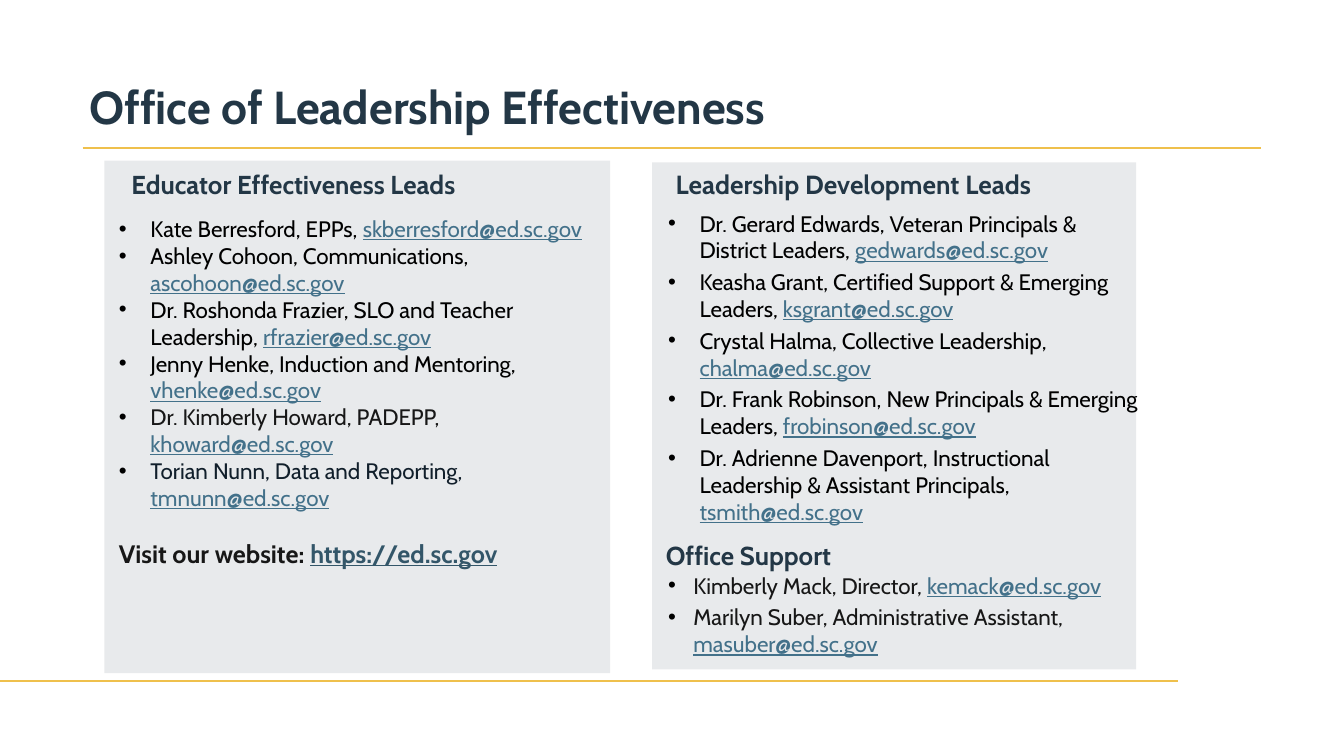
"""Build the Office of Leadership Effectiveness contact slide."""
from dataclasses import dataclass

from lxml import etree
from pptx import Presentation
from pptx.dml.color import RGBColor
from pptx.enum.shapes import MSO_CONNECTOR, MSO_SHAPE
from pptx.enum.text import PP_ALIGN
from pptx.oxml.ns import qn
from pptx.util import Pt

RECTANGLE = MSO_SHAPE.RECTANGLE
STRAIGHT = MSO_CONNECTOR.STRAIGHT
LEFT, CENTER = PP_ALIGN.LEFT, PP_ALIGN.CENTER
FONT = "Cabin"
NAVY, GOLD, LINK, DARK_LINK = "233746", "EFC04C", "43718A", "335669"
BLACK, CHARCOAL, INK = "000000", "171717", "111F2B"


@dataclass(frozen=True)
class Box:
    left: float
    top: float
    width: float
    height: float


@dataclass(frozen=True)
class Heading:
    text: str
    box: Box
    size: float
    spacing: float
    align: PP_ALIGN = CENTER


@dataclass(frozen=True)
class Contact:
    role: str
    link: str
    color: str = BLACK
    margin: float = 22.5
    hang: float = 22.5
    before: float = 0
    size: float = 16
    bold: bool = False
    link_color: str = LINK


PANELS = [Box(74.5, 114.8, 361.3, 366), Box(465.8, 116, 345.8, 362.2)]
RULES = [(59, 105.8, 900.7), (0, 486.7, 841.7)]
HEADINGS = [
    Heading("Office of Leadership Effectiveness", Box(64, 62, 850, 34.6), 33, 33.3, LEFT),
    Heading("Educator Effectiveness Leads", Box(75.5, 126.7, 268, 17.3), 18.5, 16),
    Heading("Leadership Development Leads", Box(467.3, 126.7, 284.4, 17.3), 18.7, 16),
    Heading("Office Support", Box(400.3, 385.2, 268.6, 22.3), 18.5, 22.3),
]
EDUCATOR = [
    Contact("Kate Berresford, EPPs, ", "skberresford@ed.sc.gov"),
    Contact("Ashley Cohoon, Communications, ", "ascohoon@ed.sc.gov"),
    Contact("Dr. Roshonda Frazier, SLO and Teacher Leadership, ", "rfrazier@ed.sc.gov"),
    Contact("Jenny Henke, Induction and Mentoring, ", "vhenke@ed.sc.gov"),
    Contact("Dr. Kimberly Howard, PADEPP, ", "khoward@ed.sc.gov", CHARCOAL),
    Contact("Torian Nunn, Data and Reporting, ", "tmnunn@ed.sc.gov", INK),
    Contact("Visit our website: ", "https://ed.sc.gov", CHARCOAL, 0, 0, 19.4, 18, True, DARK_LINK),
]
LEADERSHIP = [
    Contact(role, link, BLACK, 34, 22.5, 3.5)
    for role, link in [
        ("Dr. Gerard Edwards, Veteran Principals & District Leaders, ", "gedwards@ed.sc.gov"),
        ("Keasha Grant, Certified Support & Emerging Leaders, ", "ksgrant@ed.sc.gov"),
        ("Crystal Halma, Collective Leadership, ", "chalma@ed.sc.gov"),
        ("Dr. Frank Robinson, New Principals & Emerging Leaders, ", "frobinson@ed.sc.gov"),
        ("Dr. Adrienne Davenport, Instructional Leadership & Assistant Principals, ",
         "tsmith@ed.sc.gov"),
    ]
]
SUPPORT = [
    Contact("Kimberly Mack, Director, ", "kemack@ed.sc.gov", CHARCOAL, 29.5, 18, 33.6),
    Contact("Marilyn Suber, Administrative Assistant, ", "masuber@ed.sc.gov", CHARCOAL,
            29.5, 18, 3.5),
]
LISTS = [
    (Box(85, 153.8, 335.5, 330), EDUCATOR),
    (Box(465.8, 149.8, 347, 330), LEADERSHIP + SUPPORT),
]


def rgb(value: str) -> RGBColor:
    """Turn a hex string into a colour."""
    return RGBColor.from_string(value)


def place(box: Box) -> tuple:
    """Give the position and size of a box in points."""
    return Pt(box.left), Pt(box.top), Pt(box.width), Pt(box.height)


def add_panel(s, box: Box) -> None:
    """Draw a translucent navy panel."""
    sp = s.shapes.add_shape(RECTANGLE, *place(box))
    sp.shadow.inherit = False
    sp.line.fill.background()
    sp.fill.solid()
    sp.fill.fore_color.rgb = rgb(NAVY)
    color = sp._element.spPr.find(qn("a:solidFill"))[0]
    etree.SubElement(color, qn("a:alpha"), val="10000")


def add_rule(s, left: float, top: float, right: float) -> None:
    """Draw a horizontal gold line."""
    sp = s.shapes.add_connector(STRAIGHT, Pt(left), Pt(top), Pt(right), Pt(top))
    sp.line.color.rgb = rgb(GOLD)
    sp.line.width = Pt(1.5)
    etree.SubElement(sp._element.spPr, qn("a:effectLst"))


def add_text_frame(s, box: Box):
    """Add a wrapping text box without insets and return its text frame."""
    tf = s.shapes.add_textbox(*place(box)).text_frame
    tf.word_wrap = True
    tf.margin_left = tf.margin_top = tf.margin_right = tf.margin_bottom = 0
    return tf


def add_heading(s, heading: Heading) -> None:
    """Write a bold navy heading."""
    p = add_text_frame(s, heading.box).paragraphs[0]
    p.text = heading.text
    p.alignment = heading.align
    p.line_spacing = Pt(heading.spacing)
    p.font.name, p.font.size, p.font.bold = FONT, Pt(heading.size), True
    p.font.color.rgb = rgb(NAVY)


def add_bullet(p, contact: Contact) -> None:
    """Give a paragraph a hanging black bullet."""
    props = p._p.get_or_add_pPr()
    props.set("marL", str(Pt(contact.margin)))
    props.set("indent", str(-Pt(contact.hang)))
    color = etree.SubElement(props, qn("a:buClr"))
    etree.SubElement(color, qn("a:srgbClr"), val=BLACK)
    etree.SubElement(props, qn("a:buFont"), typeface="Arial")
    etree.SubElement(props, qn("a:buChar"), char="•")


def add_contacts(s, box: Box, contacts: list[Contact]) -> None:
    """Write a list of contacts with underlined addresses."""
    tf = add_text_frame(s, box)
    for i, contact in enumerate(contacts):
        p = tf.add_paragraph() if i else tf.paragraphs[0]
        if contact.hang:
            add_bullet(p, contact)
        p.space_before = Pt(contact.before if i else 0)
        p.font.name, p.font.size, p.font.bold = FONT, Pt(contact.size), contact.bold
        for text, color in [(contact.role, contact.color), (contact.link, contact.link_color)]:
            r = p.add_run()
            r.text = text
            r.font.color.rgb = rgb(color)
            r.font.underline = text == contact.link


def main() -> None:
    """Build and save the slide."""
    prs = Presentation()
    prs.slide_width, prs.slide_height = Pt(960), Pt(540)
    s = prs.slides.add_slide(prs.slide_layouts[6])
    for panel in PANELS:
        add_panel(s, panel)
    for rule in RULES:
        add_rule(s, *rule)
    for heading in HEADINGS:
        add_heading(s, heading)
    for box, contacts in LISTS:
        add_contacts(s, box, contacts)
    prs.save("out.pptx")


if __name__ == "__main__":
    main()
